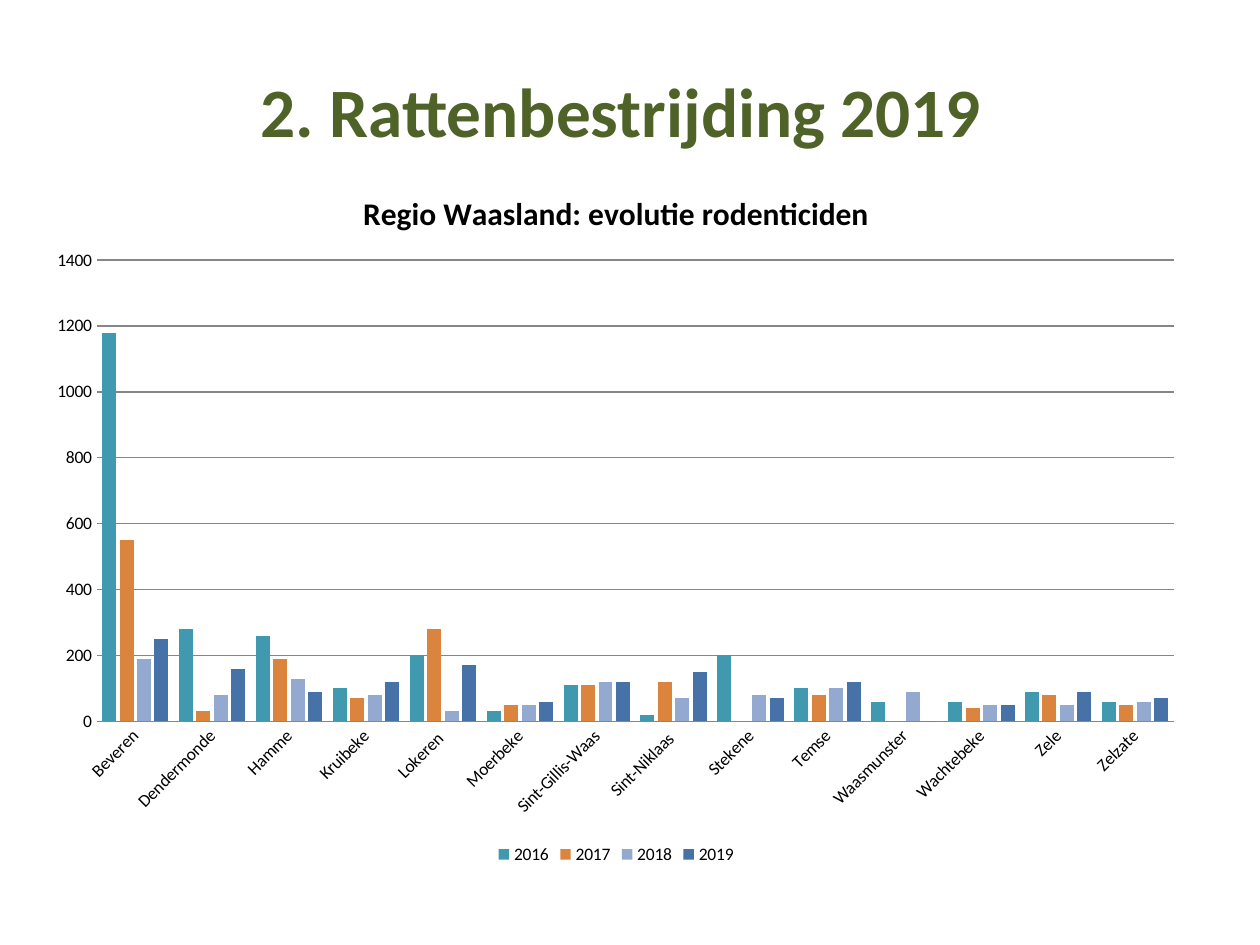
from lxml import etree
from pptx import Presentation
from pptx import util as u
from pptx.chart.data import CategoryChartData
from pptx.dml.color import RGBColor
from pptx.enum import chart as charts, text
from pptx.oxml.ns import qn

COLORS = {
    "background": "FFFFFF", "title": "4F6228", "text": "000000", "grid": "868686",
    "2016": "4199AF", "2017": "DB843D", "2018": "93A9CF", "2019": "4672A8",
}
# Rodenticide use per municipality, one value per year in YEARS
YEARS = ["2016", "2017", "2018", "2019"]
USAGE = {
    "Beveren": (1180, 550, 190, 250),
    "Dendermonde": (280, 30, 80, 160),
    "Hamme": (260, 190, 130, 90),
    "Kruibeke": (100, 70, 80, 120),
    "Lokeren ": (200, 280, 30, 170),
    "Moerbeke": (30, 50, 50, 60),
    "Sint-Gillis-Waas": (110, 110, 120, 120),
    "Sint-Niklaas ": (20, 120, 70, 150),
    "Stekene": (200, 0, 80, 70),
    "Temse": (100, 80, 100, 120),
    "Waasmunster": (60, 0, 90, 0),
    "Wachtebeke": (60, 40, 50, 50),
    "Zele": (90, 80, 50, 90),
    "Zelzate": (60, 50, 60, 70),
}


def color(name):
    return RGBColor.from_string(COLORS[name])


def format_font(font, size, name="text", bold=False):
    font.name, font.size, font.bold = "Calibri", u.Pt(size), bold
    font.color.rgb = color(name)


def write(frame, words, align=text.PP_ALIGN.CENTER, **style):
    """Put one formatted paragraph in a text frame."""
    paragraph = frame.paragraphs[0]
    paragraph.alignment = align
    run = paragraph.add_run()
    run.text = words
    format_font(run.font, **style)


def set_plot_layout(chart, **fractions):
    """Fix the inner plot area as fractions of the chart."""
    plot_area = chart._chartSpace.chart.plotArea
    for old in plot_area.findall(qn("c:layout")):
        plot_area.remove(old)
    layout = etree.Element(qn("c:layout"))
    manual = etree.SubElement(layout, qn("c:manualLayout"))
    settings = {"layoutTarget": "inner", "xMode": "edge", "yMode": "edge", **fractions}
    for tag, value in settings.items():
        etree.SubElement(manual, qn(f"c:{tag}")).set("val", str(value))
    plot_area.insert(0, layout)


class SlideBuilder:
    def __init__(self, presentation):
        self.slide = presentation.slides.add_slide(presentation.slide_layouts[6])
        fill = self.slide.background.fill
        fill.solid()
        fill.fore_color.rgb = color("background")

    def title(self, words, left, top, width, height):
        box = self.slide.shapes.add_textbox(*map(u.Inches, (left, top, width, height)))
        frame = box.text_frame
        frame.word_wrap = True
        frame.vertical_anchor = text.MSO_ANCHOR.MIDDLE
        frame.margin_top = u.Inches(0.28)
        write(frame, words, size=39.6, name="title", bold=True)

    def column_chart(self, heading, left, top, width, height):
        data = CategoryChartData()
        data.categories = list(USAGE)
        for year, values in zip(YEARS, zip(*USAGE.values())):
            data.add_series(year, values)
        chart = self.slide.shapes.add_chart(
            charts.XL_CHART_TYPE.COLUMN_CLUSTERED,
            *map(u.Inches, (left, top, width, height)), data).chart
        format_font(chart.font, 10)
        write(chart.chart_title.text_frame, heading, size=18, bold=True)
        chart.chart_title.include_in_layout = False

        # Columns
        plot = chart.plots[0]
        plot.gap_width, plot.overlap, plot.vary_by_categories = 75, -25, False
        for series in plot.series:
            series.format.fill.solid()
            series.format.fill.fore_color.rgb = color(series.name)

        # Axes
        category_axis, value_axis = chart.category_axis, chart.value_axis
        for axis in (category_axis, value_axis):
            axis.major_tick_mark = axis.minor_tick_mark = charts.XL_TICK_MARK.NONE
        value_axis.minimum_scale, value_axis.maximum_scale = 0, 1400
        value_axis.major_unit = 200
        value_axis.format.line.fill.background()
        category_axis.tick_labels.font.size = u.Pt(10)
        category_axis._element.txPr.bodyPr.set("rot", "-2700000")
        for line in (category_axis.format.line, value_axis.major_gridlines.format.line):
            line.color.rgb = color("grid")
            line.width = u.Pt(0.75)

        # Legend
        chart.has_legend = True
        chart.legend.position = charts.XL_LEGEND_POSITION.BOTTOM
        chart.legend.include_in_layout = False
        format_font(chart.legend.font, 10)
        set_plot_layout(chart, x=0.053, y=0.135, w=0.927, h=0.655)


def main():
    presentation = Presentation()
    presentation.slide_width, presentation.slide_height = u.Inches(10), u.Inches(7.5)
    builder = SlideBuilder(presentation)
    builder.title("2. Rattenbestrijding 2019", 0.43, 0.13, 9, 1.25)
    builder.column_chart("Regio Waasland: evolutie rodenticiden", 0.28, 1.31, 9.22, 5.59)
    presentation.save("out.pptx")


if __name__ == "__main__":
    main()
